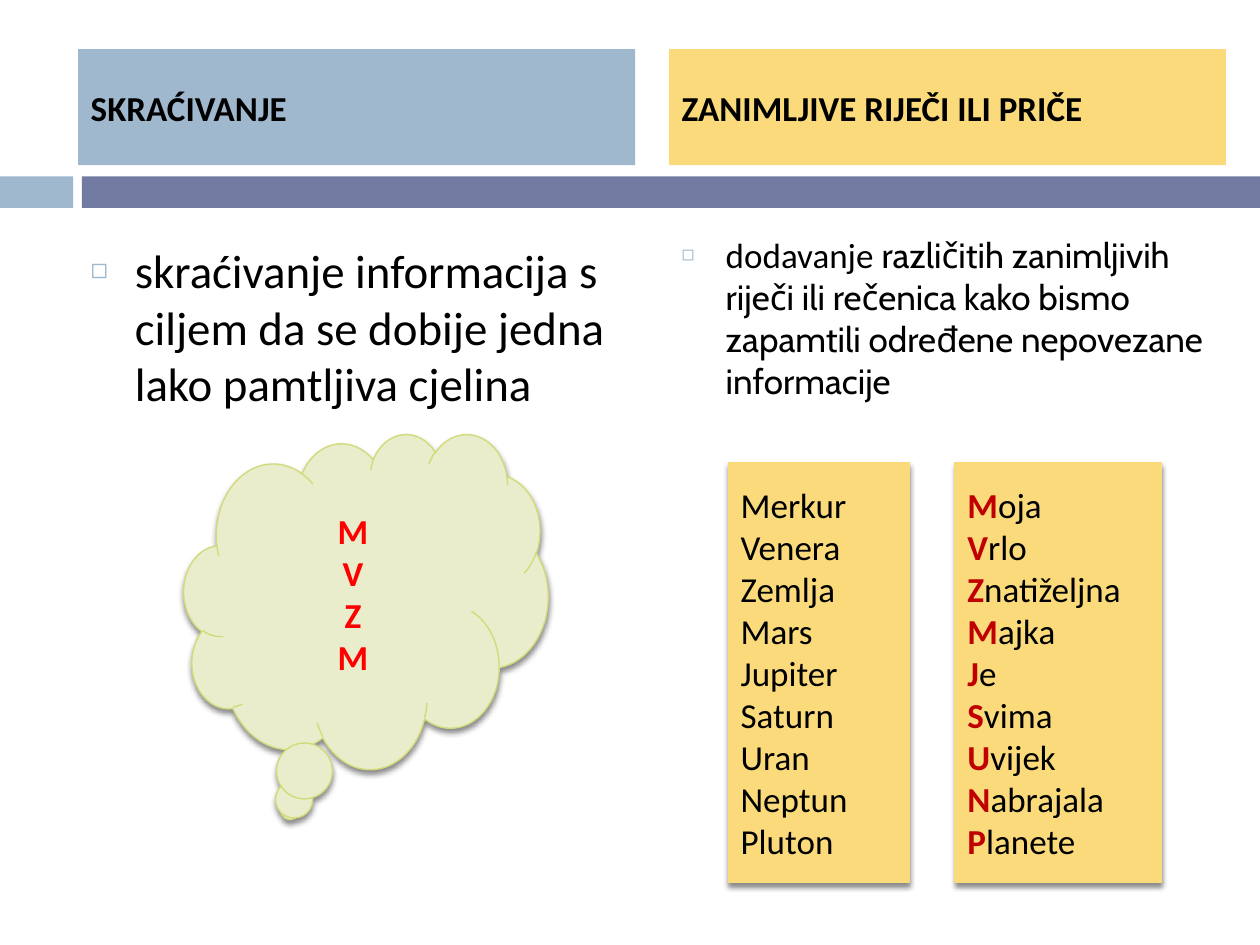
from lxml.etree import SubElement as Sub
from pptx import Presentation
from pptx.dml.color import RGBColor as Rgb
from pptx.enum.shapes import MSO_SHAPE as Shape
from pptx.enum.text import MSO_ANCHOR as Anchor, MSO_AUTO_SIZE as Auto, PP_ALIGN as Align
from pptx.oxml.ns import qn
from pptx.util import Inches, Pt

HUE = {
    "blue": "9FB8CD", "slate": "727CA3", "gold": "FADA7A", "leaf": "EAEDCB",
    "lime": "D2DA7A", "black": "000000", "red": "FF0000", "wine": "C00000",
}
LEFT, RIGHT, WIDE = 0.62, 5.31, 4.42
WORDS = ["Moja", "Vrlo", "Znatiželjna", "Majka", "Je", "Svima", "Uvijek", "Nabrajala", "Planete"]
PLANETS = ["Merkur", "Venera", "Zemlja", "Mars", "Jupiter", "Saturn", "Uran", "Neptun", "Pluton"]


def color(name):
    return Rgb.from_string(HUE[name])


def place(shape, box):
    for side, size in zip(("left", "top", "width", "height"), box):
        setattr(shape, side, Inches(size))


def paint(shape, name):
    shape.fill.solid()
    shape.fill.fore_color.rgb = color(name)


def write(para, text, hue="black", **extra):
    run = para.add_run()
    run.text = text
    look = {"name": "Calibri", "size": Pt(20), "bold": False, **extra}
    for key, value in look.items():
        setattr(run.font, key, value)
    run.font.color.rgb = color(hue)


def frame(shape, anchor):
    text = shape.text_frame
    for key, value in {"word_wrap": True, "auto_size": Auto.NONE, "vertical_anchor": anchor}.items():
        setattr(text, key, value)
    return text


def shade(shape):
    """Soft shadow straight below the shape."""
    shape.shadow.inherit = False
    effects = shape.element.spPr.find(qn("a:effectLst"))
    outer = Sub(effects, qn("a:outerShdw"), blurRad=str(Pt(3)), dist=str(Pt(2.4)),
                dir="5400000", algn="ctr", rotWithShape="0")
    tint = Sub(outer, qn("a:srgbClr"), val=HUE["black"])
    Sub(tint, qn("a:alpha"), val="45000")


def add_band(slide, left, width, hue):
    band = slide.shapes.add_shape(Shape.RECTANGLE, Inches(left), Inches(1.4), Inches(width), Inches(0.25))
    paint(band, hue)
    band.line.fill.background()
    band.shadow.inherit = False


def add_head(holder, left, text, hue):
    place(holder, (left, 0.39, WIDE, 0.92))
    paint(holder, hue)
    para = frame(holder, Anchor.MIDDLE).paragraphs[0]
    para.space_before = Pt(7)
    write(para, text, bold=True)


def add_body(holder, box, parts):
    place(holder, box)
    para = frame(holder, Anchor.TOP).paragraphs[0]
    para.space_before = Pt(7)
    for text, look in parts:
        write(para, text, **look)
    # Hollow square bullet with a hanging indent
    props = para._p.get_or_add_pPr()
    props.set("marL", str(Inches(0.35)))
    props.set("indent", str(-Inches(0.35)))
    Sub(Sub(props, qn("a:buClr")), qn("a:srgbClr"), val=HUE["blue"])
    Sub(props, qn("a:buSzPct"), val="60000")
    Sub(props, qn("a:buChar"), char="◻")


def add_card(slide, kind, box, lines, fill="gold", edge="gold", align=Align.LEFT):
    """Shadowed shape; each line is a list of (text, look) parts."""
    card = slide.shapes.add_shape(kind, *map(Inches, box))
    paint(card, fill)
    card.line.color.rgb = color(edge)
    card.line.width = Pt(0.79)
    shade(card)
    text = frame(card, Anchor.MIDDLE)
    for row, parts in enumerate(lines):
        para = text.add_paragraph() if row else text.paragraphs[0]
        para.alignment = align
        for part, look in parts:
            write(para, part, **look)


def main():
    deck = Presentation()
    deck.slide_width, deck.slide_height = Inches(10), Inches(7.5)
    slide = deck.slides.add_slide(deck.slide_layouts[4])
    title = slide.shapes.title.element
    title.getparent().remove(title)
    holders = {item.placeholder_format.idx: item for item in slide.placeholders}

    # Divider
    add_band(slide, 0, 0.58, "blue")
    add_band(slide, 0.65, 9.35, "slate")

    # Headings and bullets
    add_head(holders[1], LEFT, "SKRAĆIVANJE", "blue")
    add_head(holders[3], RIGHT, "ZANIMLJIVE RIJEČI ILI PRIČE", "gold")
    add_body(holders[2], (LEFT, 1.87, WIDE, 1.23), [
        ("skraćivanje informacija s ciljem da se dobije jedna lako pamtljiva cjelina", {"size": Pt(26.8)})])
    add_body(holders[4], (RIGHT, 1.8, WIDE, 1.48), [
        ("dodavanje ", {}),
        ("različitih zanimljivih riječi ili rečenica kako bismo zapamtili određene nepovezane informacije",
         {"name": "Cabin"})])

    # Cloud with initials
    bold = {"hue": "red", "bold": True}
    add_card(slide, Shape.CLOUD_CALLOUT, (1.46, 3.44, 2.89, 2.66),
             [[(letter, bold)] for letter in "MVZM"], "leaf", "lime", Align.CENTER)

    # Planets and the sentence that recalls them
    first = {"hue": "wine", "bold": True}
    add_card(slide, Shape.RECTANGLE, (5.78, 3.67, 1.44, 3.33), [[(name, {})] for name in PLANETS])
    add_card(slide, Shape.RECTANGLE, (7.58, 3.67, 1.64, 3.33),
             [[(word[0], first), (word[1:], {})] for word in WORDS])

    deck.save("out.pptx")


if __name__ == "__main__":
    main()
